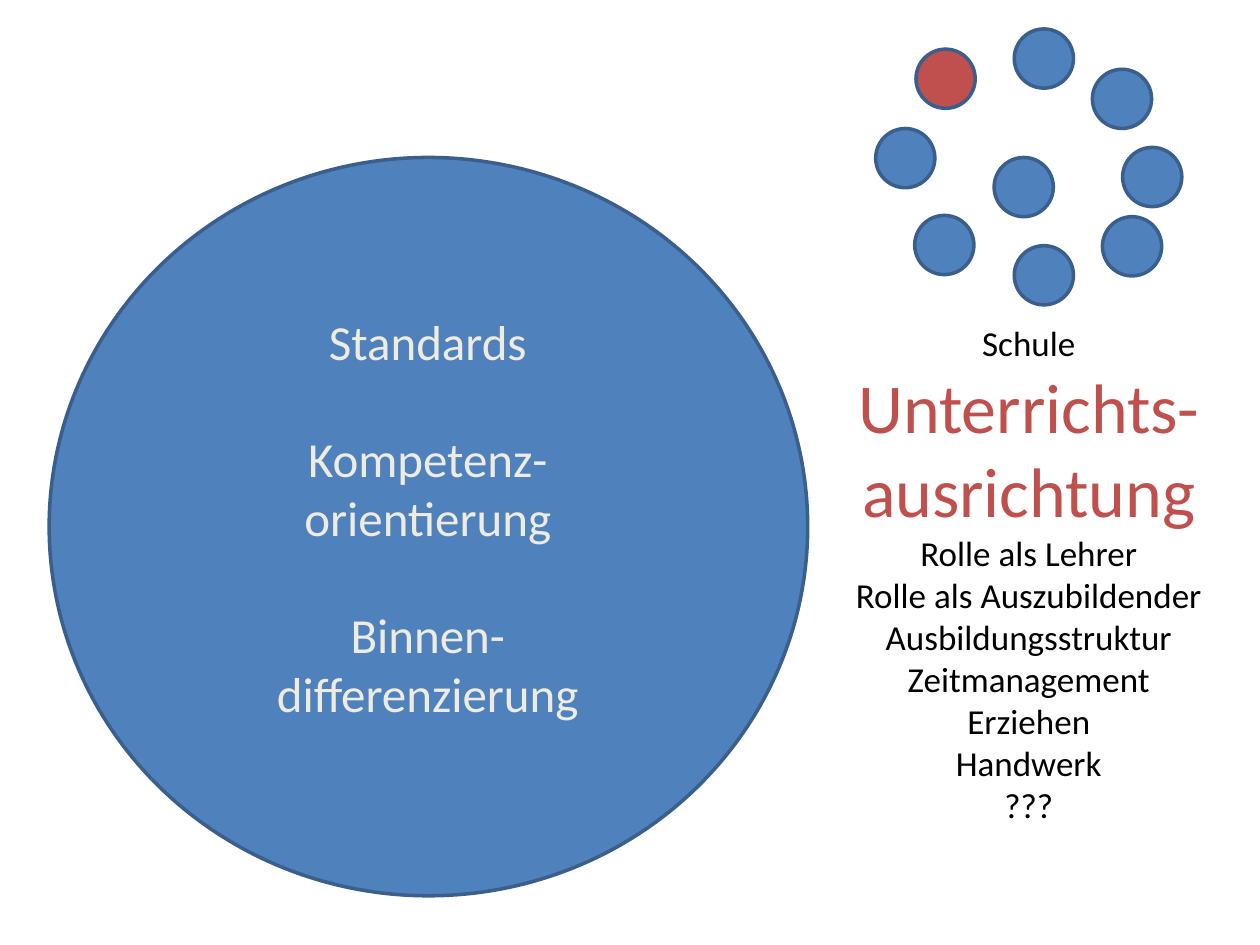
"""Build the slide on teaching focus: one large circle, a ring of small circles and a topic list."""
from pptx import Presentation
from pptx import util as u
from pptx.dml.color import RGBColor
from pptx.enum import shapes, text

COLORS = {"blue": "4F81BD", "edge": "3A5F8C", "red": "C0504D", "cream": "EEECE1", "black": "000000"}

deck = Presentation()
deck.slide_width, deck.slide_height = u.Inches(10), u.Inches(7.5)
column, row = deck.slide_width / 100, deck.slide_height / 75
page = deck.slides.add_slide(deck.slide_layouts[6])


def add_circle(left, top, width, height, color):
    circle = page.shapes.add_shape(
        shapes.MSO_SHAPE.OVAL, int(left * column), int(top * row), int(width * column), int(height * row))
    circle.shadow.inherit = False
    circle.fill.solid()
    circle.fill.fore_color.rgb = RGBColor.from_string(COLORS[color])
    circle.line.color.rgb = RGBColor.from_string(COLORS["edge"])
    circle.line.width = u.Pt(2)


def add_lines(left, top, width, height, lines):
    box = page.shapes.add_textbox(int(left * column), int(top * row), int(width * column), int(height * row))
    frame = box.text_frame
    frame.word_wrap = True
    frame.auto_size = text.MSO_AUTO_SIZE.SHAPE_TO_FIT_TEXT
    for index, (words, size, color, gap) in enumerate(lines):
        para = frame.paragraphs[0] if index == 0 else frame.add_paragraph()
        para.alignment = text.PP_ALIGN.CENTER
        para.space_before = u.Pt(gap)
        span = para.add_run()
        span.text = words
        for name, value in {"name": "Calibri", "size": u.Pt(size)}.items():
            setattr(span.font, name, value)
        span.font.color.rgb = RGBColor.from_string(COLORS[color])


add_circle(3.9, 12.5, 60.2, 58.6, "blue")

goals = [("Standards", 0), ("Kompetenz-", 33.5), ("orientierung", 0), ("Binnen-", 33.5), ("differenzierung", 0)]
add_lines(15.6, 24.2, 36.7, 37.4, [(words, 28, "cream", gap) for words, gap in goals])

focus = "Unterrichts-ausrichtung"
topics = ["Schule", focus, "Rolle als Lehrer", "Rolle als Auszubildender", "Ausbildungsstruktur",
          "Zeitmanagement", "Erziehen", "Handwerk", "???"]
add_lines(66.4, 25, 30.5, 44.4,
          [(words, 40, "red", 0) if words == focus else (words, 20, "black", 0) for words in topics])

dots = [(78.9, 12.5, "blue"), (72.7, 3.9, "red"), (69.5, 10.2, "blue"), (72.6, 17.1, "blue"),
        (80.5, 19.5, "blue"), (87.5, 17.2, "blue"), (89.1, 11.7, "blue"), (86.7, 5.5, "blue"),
        (80.5, 2.3, "blue")]
for left, top, color in dots:
    add_circle(left, top, 4.7, 4.7, color)

deck.save("out.pptx")
